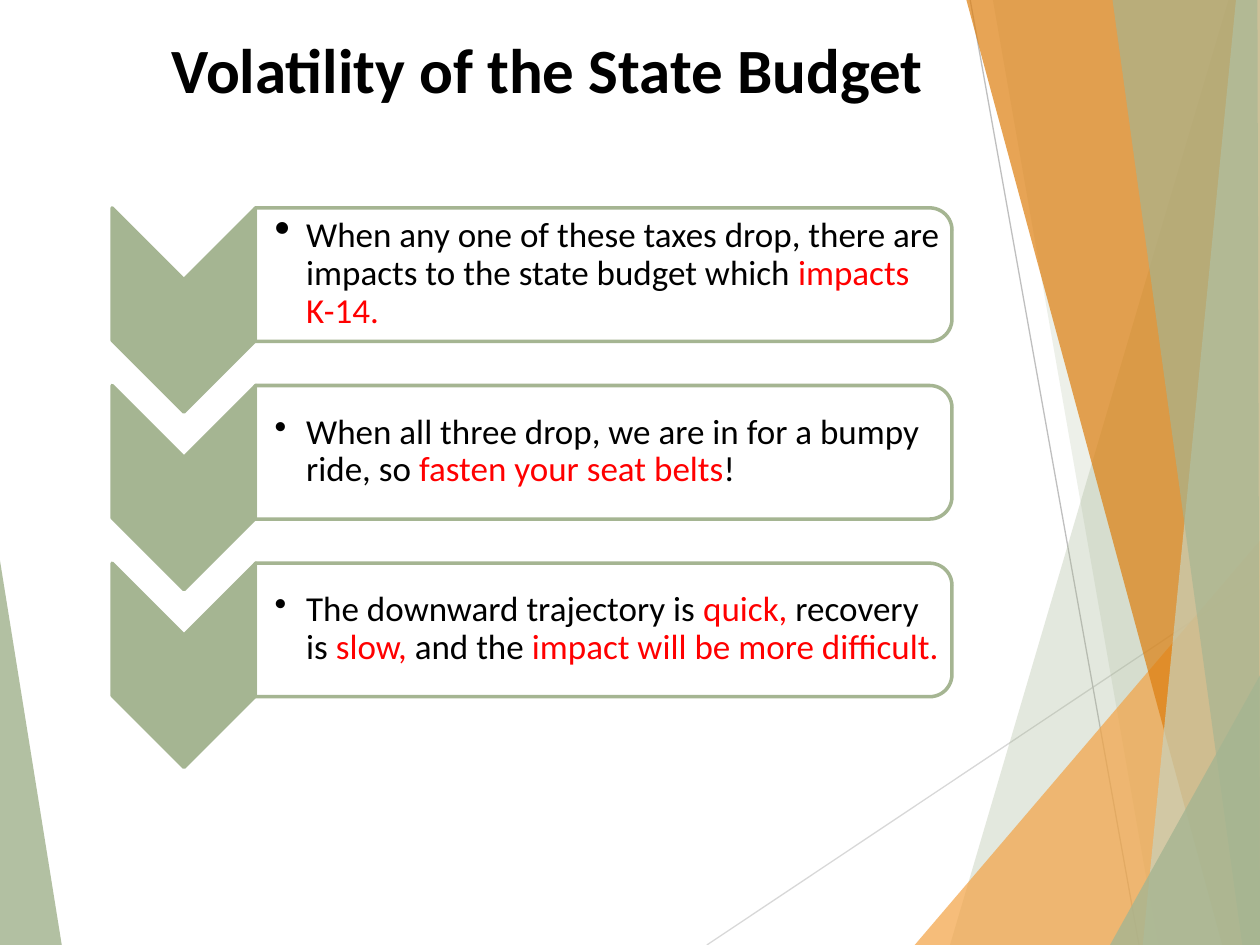
from dataclasses import dataclass

from pptx import Presentation
from pptx.dml.color import RGBColor
from pptx.enum.shapes import MSO_CONNECTOR, MSO_SHAPE
from pptx.enum.text import MSO_ANCHOR, PP_ALIGN
from pptx.oxml.ns import qn
from pptx.oxml.xmlchemy import OxmlElement
from pptx.util import Inches, Pt

LINE = MSO_CONNECTOR.STRAIGHT
CHEVRON = MSO_SHAPE.CHEVRON
PANEL = MSO_SHAPE.ROUND_2_SAME_RECTANGLE
TOP, MIDDLE = MSO_ANCHOR.TOP, MSO_ANCHOR.MIDDLE
LEFT, CENTER = PP_ALIGN.LEFT, PP_ALIGN.CENTER


@dataclass(frozen=True)
class Theme:
    font: str = "Calibri"
    title: int = 36
    body: int = 20
    black: str = "000000"
    white: str = "FFFFFF"
    red: str = "FF0000"
    sage: str = "A5B592"
    pale: str = "C8D2BC"
    amber: str = "F3A447"
    rust: str = "DD7E0E"
    light: str = "D8D8D8"
    gray: str = "BFBFBF"


T = Theme()

# Background shards: corners, colour, opacity in percent
SHARDS = [
    ([(0, 4.45), (0.49, 7.5), (0, 7.5)], T.sage, 85),
    ([(9.75, 0), (7.54, 7.5), (10, 7.5), (10, 0)], T.sage, 30),
    ([(7.88, 0), (9.19, 7.5), (10, 7.5), (10, 0)], T.sage, 20),
    ([(7.26, 7.5), (10, 4.29), (10, 7.5)], T.amber, 72),
    ([(7.67, 0), (9.7, 7.5), (10, 7.5), (10, 0)], T.rust, 70),
    ([(9.81, 0), (9.07, 7.5), (10, 7.5), (10, 0)], T.pale, 70),
    ([(8.83, 0), (9.86, 7.5), (10, 7.5), (9.98, 0)], T.sage, 65),
    ([(8.81, 7.5), (10, 5.36), (10, 7.5)], T.sage, 80),
]
RAYS = [((5.61, 7.5), (10, 4.57), T.light), ((7.7, 0), (9.04, 7.5), T.gray)]

# Rows: bullet size in percent, then runs of text and colour
ROWS = [
    (130, [("When any one of these taxes drop, there are impacts to the "
            "state budget which ", T.black), ("impacts K-14.", T.red)]),
    (100, [("When all three drop, we are in for a bumpy ride, so ", T.black),
           ("fasten your seat belts", T.red), ("!", T.black)]),
    (100, [("The downward trajectory is ", T.black), ("quick,", T.red),
           (" recovery is ", T.black), ("slow, ", T.red),
           ("and the ", T.black),
           ("impact will be more difficult.", T.red)]),
]
PITCH = 1.41


def rgb(code):
    return RGBColor.from_string(code)


def paint(shape, color, alpha=100, line=None):
    shape.shadow.inherit = False
    shape.fill.solid()
    shape.fill.fore_color.rgb = rgb(color)
    if alpha < 100:
        tint = shape.fill._xPr.find(qn("a:solidFill"))[0]
        node = OxmlElement("a:alpha")
        node.set("val", str(alpha * 1000))
        tint.append(node)
    if line:
        shape.line.color.rgb = rgb(line)
        shape.line.width = Pt(2)
    else:
        shape.line.fill.background()


def shard(slide, points, color, alpha):
    spots = [(Inches(x), Inches(y)) for x, y in points]
    path = slide.shapes.build_freeform(*spots[0], scale=1.0)
    path.add_line_segments(spots[1:], close=True)
    paint(path.convert_to_shape(), color, alpha)


def ray(slide, start, end, color):
    line = slide.shapes.add_connector(
        LINE, *(Inches(v) for v in (*start, *end)))
    line.line.color.rgb = rgb(color)
    line.line.width = Pt(0.75)
    line._element.spPr.append(OxmlElement("a:effectLst"))


def turned(slide, kind, mid, size, color, alpha=100):
    """Add a preset shape, turned a quarter, around its midpoint."""
    (x, y), (w, h) = mid, size
    shape = slide.shapes.add_shape(
        kind, Inches(x - w / 2), Inches(y - h / 2), Inches(w), Inches(h))
    shape.rotation = 90
    paint(shape, color, alpha, line=T.sage)


def bullet(para, size):
    props = para._p.get_or_add_pPr()
    props.set("marL", str(Inches(0.25)))
    props.set("indent", str(-Inches(0.25)))
    for tag, key, val in (("a:buSzPct", "val", str(size * 1000)),
                          ("a:buChar", "char", "•")):
        node = OxmlElement(tag)
        node.set(key, val)
        props.append(node)


def text(slide, box, runs, size, bold=False, align=LEFT, anchor=TOP,
         inset=(0.1, 0.05, 0.1, 0.05), mark=None, space=1.0):
    frame = slide.shapes.add_textbox(*(Inches(v) for v in box)).text_frame
    frame.word_wrap = True
    frame.vertical_anchor = anchor
    (frame.margin_left, frame.margin_top,
     frame.margin_right, frame.margin_bottom) = map(Inches, inset)
    para = frame.paragraphs[0]
    if mark:
        bullet(para, mark)
    para.alignment = align
    para.line_spacing = space
    for words, color in runs:
        run = para.add_run()
        run.text = words
        run.font.name = T.font
        run.font.size = Pt(size)
        run.font.bold = bold
        run.font.color.rgb = rgb(color)


def row(slide, mid, mark, runs):
    turned(slide, CHEVRON, (1.46, mid + 0.28), (1.62, 1.14), T.sage)
    turned(slide, PANEL, (4.79, mid), (1.06, 5.53), T.white, 90)
    text(slide, (2.02, mid - 0.48, 5.48, 0.95), runs, T.body, anchor=MIDDLE,
         inset=(0.16, 0.01, 0.01, 0.01), mark=mark, space=0.9)


def main():
    deck = Presentation()
    deck.slide_width, deck.slide_height = Inches(10), Inches(7.5)
    slide = deck.slides.add_slide(deck.slide_layouts[6])

    # Background
    shard(slide, *SHARDS[0])
    for item in RAYS:
        ray(slide, *item)
    for item in SHARDS[1:]:
        shard(slide, *item)

    # Title
    text(slide, (0.5, 0.19, 7.69, 1.25),
         [("Volatility of the State Budget", T.black)],
         T.title, bold=True, align=CENTER)

    # Chevron list
    for i, (mark, runs) in enumerate(ROWS):
        row(slide, 2.18 + i * PITCH, mark, runs)

    deck.save("out.pptx")


if __name__ == "__main__":
    main()
